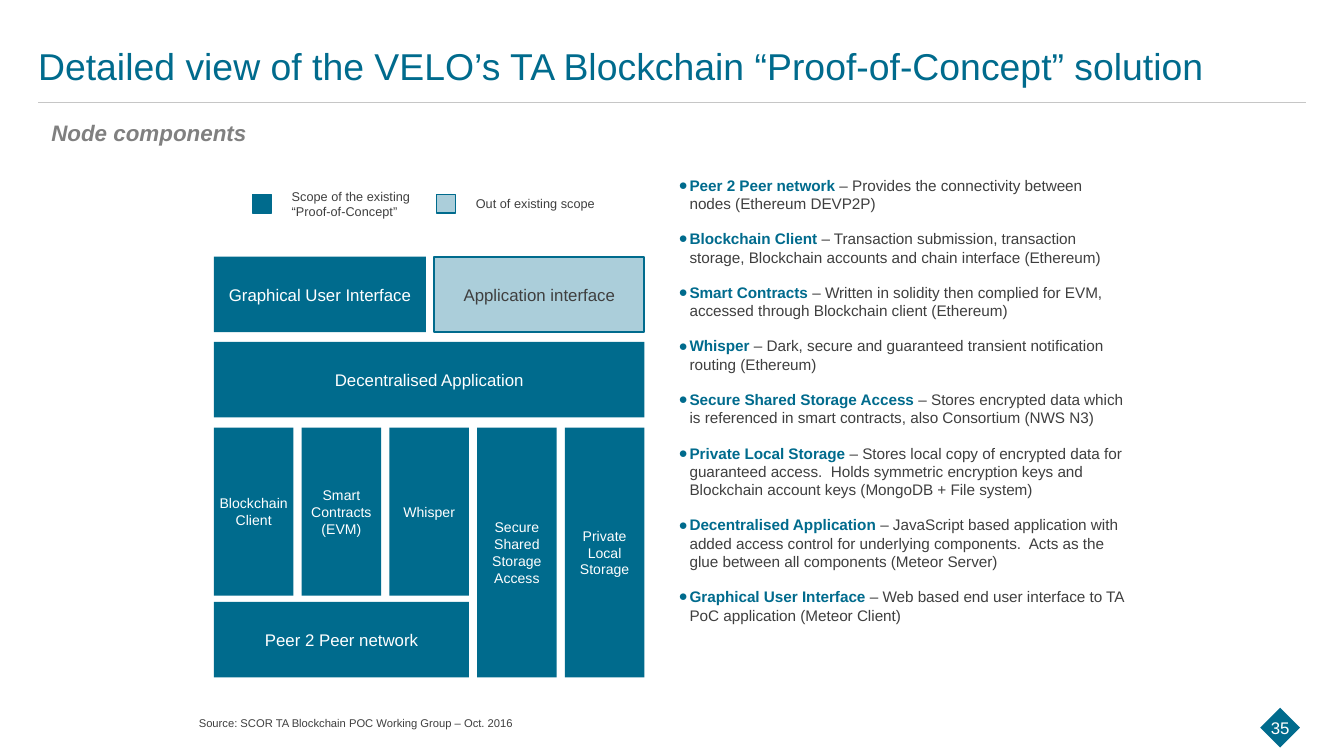
from pptx import Presentation
from pptx.dml.color import RGBColor
from pptx.enum.shapes import MSO_CONNECTOR, MSO_SHAPE
from pptx.enum.text import MSO_ANCHOR, PP_ALIGN
from pptx.oxml.ns import qn
from pptx.util import Pt
from lxml.etree import SubElement

TEAL = RGBColor(0x00, 0x6B, 0x8D)
PALE_TEAL = RGBColor(0xAB, 0xCE, 0xDA)
DARK_GREY = RGBColor(0x3F, 0x3F, 0x3F)
MID_GREY = RGBColor(0x80, 0x80, 0x80)
RULE_GREY = RGBColor(0xC6, 0xC6, 0xC6)
WHITE = RGBColor(0xFF, 0xFF, 0xFF)

presentation = Presentation()
presentation.slide_width = Pt(720)
presentation.slide_height = Pt(405)
slide = presentation.slides.add_slide(presentation.slide_layouts[6])


def write(shape, text, size, color, margins=(7.2, 3.6, 7.2, 3.6),
          align=PP_ALIGN.LEFT, anchor=MSO_ANCHOR.MIDDLE):
    frame = shape.text_frame
    frame.word_wrap = True
    frame.vertical_anchor = anchor
    frame.margin_left, frame.margin_top, frame.margin_right, frame.margin_bottom = map(Pt, margins)
    paragraph = frame.paragraphs[0]
    paragraph.text = text
    paragraph.alignment = align
    paragraph.font.size = Pt(size)
    paragraph.font.name = "Arial"
    paragraph.font.color.rgb = color
    return paragraph


def add_box(left, top, width, height, fill, line_width=0):
    shape = slide.shapes.add_shape(
        MSO_SHAPE.RECTANGLE, Pt(left), Pt(top), Pt(width), Pt(height))
    shape.shadow.inherit = False
    shape.fill.solid()
    shape.fill.fore_color.rgb = fill
    if line_width:
        shape.line.color.rgb = TEAL
        shape.line.width = Pt(line_width)
    else:
        shape.line.fill.background()
    return shape


# Rule under the title
rule = slide.shapes.add_connector(MSO_CONNECTOR.STRAIGHT, Pt(20.4), Pt(55), Pt(699.6), Pt(55))
rule.line.color.rgb = RULE_GREY
rule.line.width = Pt(0.5)
SubElement(rule._element.spPr, qn("a:effectLst"))

# Title and subtitle
title = slide.shapes.add_textbox(Pt(20.4), Pt(20.6), Pt(679.2), Pt(32))
write(title, "Detailed view of the VELO’s TA Blockchain “Proof-of-Concept” solution",
      20, TEAL, (0, 0, 7.2, 0)).line_spacing = 0.9
subtitle = slide.shapes.add_textbox(Pt(20.4), Pt(61), Pt(679.2), Pt(20))
paragraph = write(subtitle, "Node components", 12, MID_GREY)
paragraph.font.bold = True
paragraph.font.italic = True

# Node diagram: five columns, with boxes spanning some of them
LEFT, COLUMN, PITCH = 114.6, 42.6, 47
FULL = 4 * PITCH + COLUMN
WIDE_HEIGHT, SHORT_HEIGHT, TALL_HEIGHT = 40.4, 90, 133.8
COLUMN_TOP = 229.1

blocks = [
    ("Graphical User Interface", LEFT, 137.5, 113.6, WIDE_HEIGHT, 9),
    ("Application interface", 232.6, 137.5, 112.6, WIDE_HEIGHT, 9),
    ("Decentralised Application", LEFT, 183.2, FULL, WIDE_HEIGHT, 9),
    ("Peer 2 Peer network", LEFT, 322.5, 2 * PITCH + COLUMN, WIDE_HEIGHT, 9),
]
columns = [
    ("Blockchain Client", SHORT_HEIGHT),
    ("Smart Contracts\v(EVM)", SHORT_HEIGHT),
    ("Whisper", SHORT_HEIGHT),
    ("Secure Shared Storage Access", TALL_HEIGHT),
    ("Private Local Storage", TALL_HEIGHT),
]
for index, (label, height) in enumerate(columns):
    blocks.append((label, LEFT + index * PITCH, COLUMN_TOP, COLUMN, height, 7.5))

for label, left, top, width, height, size in blocks:
    out_of_scope = label == "Application interface"
    box = add_box(left, top, width, height,
                  PALE_TEAL if out_of_scope else TEAL, 1 if out_of_scope else 0)
    write(box, label, size, DARK_GREY if out_of_scope else WHITE,
          (2, 2, 2, 2), PP_ALIGN.CENTER)

# Legend
legend = [
    (135.4, TEAL, "Scope of the existing\v“Proof-of-Concept”"),
    (234, PALE_TEAL, "Out of existing scope"),
]
for left, fill, label in legend:
    add_box(left, 104.2, 10, 10, fill, 0.75)
    caption = slide.shapes.add_textbox(Pt(left + 13.8), Pt(99.6), Pt(80.6), Pt(19))
    write(caption, label, 6.8, DARK_GREY)

# Component descriptions
descriptions = [
    ("Peer 2 Peer network", "Provides the connectivity between nodes (Ethereum DEVP2P)"),
    ("Blockchain Client", "Transaction submission, transaction storage, Blockchain accounts "
     "and chain interface (Ethereum)"),
    ("Smart Contracts", "Written in solidity then complied for EVM, accessed through "
     "Blockchain client (Ethereum)"),
    ("Whisper", "Dark, secure and guaranteed transient notification routing (Ethereum)"),
    ("Secure Shared Storage Access", "Stores encrypted data which is referenced in smart "
     "contracts, also Consortium (NWS N3)"),
    ("Private Local Storage", "Stores local copy of encrypted data for guaranteed access.  "
     "Holds symmetric encryption keys and Blockchain account keys (MongoDB + File system)"),
    ("Decentralised Application", "JavaScript based application with added access control for "
     "underlying components.  Acts as the glue between all components (Meteor Server)"),
    ("Graphical User Interface", "Web based end user interface to TA PoC application "
     "(Meteor Client)"),
]
body = slide.shapes.add_textbox(Pt(363.6), Pt(94.3), Pt(239), Pt(273))
frame = body.text_frame
frame.word_wrap = True
frame.margin_left = frame.margin_top = frame.margin_right = frame.margin_bottom = 0
for index, (name, description) in enumerate(descriptions):
    paragraph = frame.add_paragraph() if index else frame.paragraphs[0]
    properties = paragraph._p.get_or_add_pPr()
    properties.set("marL", str(Pt(5.8)))
    properties.set("indent", str(Pt(-5.8)))
    bullet_color = SubElement(properties, qn("a:buClr"))
    SubElement(bullet_color, qn("a:srgbClr"), val=str(TEAL))
    SubElement(properties, qn("a:buFont"), typeface="Arial")
    SubElement(properties, qn("a:buChar"), char="●")
    paragraph.space_before = Pt(4.5 if index else 0)
    paragraph.space_after = Pt(4.5)
    paragraph.font.size = Pt(8.2)
    paragraph.font.name = "Arial"
    heading = paragraph.add_run()
    heading.text = name
    heading.font.bold = True
    heading.font.color.rgb = TEAL
    detail = paragraph.add_run()
    detail.text = f" – {description}"
    detail.font.color.rgb = DARK_GREY

# Source line
source = slide.shapes.add_textbox(Pt(99.4), Pt(380.2), Pt(185.8), Pt(14.4))
write(source, "Source: SCOR TA Blockchain POC Working Group – Oct. 2016", 6, DARK_GREY,
      anchor=MSO_ANCHOR.TOP)

# Page number on a diamond
diamond = add_box(678.2, 382.3, 15.1, 15.1, TEAL)
diamond.rotation = 45
number = slide.shapes.add_textbox(Pt(671.8), Pt(384.5), Pt(28), Pt(10.8))
write(number, "35", 9, WHITE, (0, 0, 0, 0), PP_ALIGN.CENTER)

presentation.save("out.pptx")
